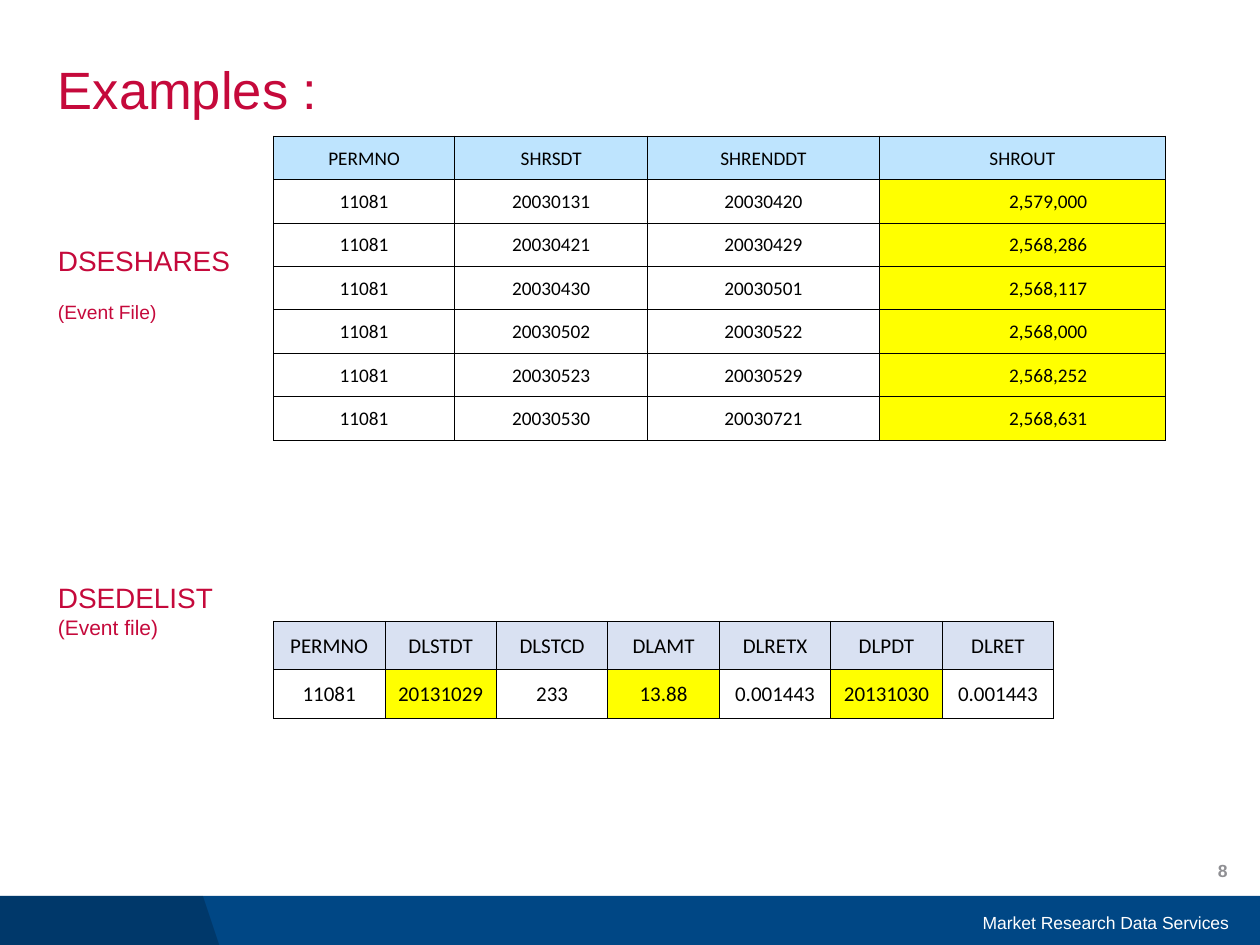
from lxml import etree
from pptx import Presentation
from pptx.dml.color import RGBColor
from pptx.enum.shapes import MSO_SHAPE
from pptx.enum.text import MSO_ANCHOR, PP_ALIGN
from pptx.oxml.ns import qn
from pptx.util import Inches, Pt

RECT = MSO_SHAPE.RECTANGLE
MID = MSO_ANCHOR.MIDDLE
LEFT, MIDDLE, RIGHT = PP_ALIGN.LEFT, PP_ALIGN.CENTER, PP_ALIGN.RIGHT
COLS, ROWS = 100, 75
WIDE, HIGH = Inches(10), Inches(7.5)
RED, BLUE, BLACK, WHITE = "C5093B", "004785", "000000", "FFFFFF"
GREY, SKY, PALE, GOLD = "8F8F93", "BEE4FE", "D9E1F2", "FFFF00"

HEADS = [
    ("Examples :", 30, 0),
    ("DSESHARES", 16, 71),
    ("(Event File)", 11, 13),
    ("DSEDELIST", 16, 147),
    ("(Event file)", 12, 0),
]
SHARES = [
    ("PERMNO", "SHRSDT", "SHRENDDT", "SHROUT"),
    ("11081", "20030131", "20030420", "2,579,000"),
    ("11081", "20030421", "20030429", "2,568,286"),
    ("11081", "20030430", "20030501", "2,568,117"),
    ("11081", "20030502", "20030522", "2,568,000"),
    ("11081", "20030523", "20030529", "2,568,252"),
    ("11081", "20030530", "20030721", "2,568,631"),
]
DELIST = [
    ("PERMNO", "DLSTDT", "DLSTCD", "DLAMT", "DLRETX", "DLPDT", "DLRET"),
    ("11081", "20131029", "233", "13.88", "0.001443", "20131030", "0.001443"),
]


def across(cols):
    return round(WIDE * cols / COLS)


def down(rows):
    return round(HIGH * rows / ROWS)


def place(left, top, width, height):
    return across(left), down(top), across(width), down(height)


def paint(fill, tone):
    fill.solid()
    fill.fore_color.rgb = RGBColor.from_string(tone)


def style(para, size, tone, face="Arial", bold=False, align=LEFT):
    para.alignment = align
    for run in para.runs:
        run.font.size = Pt(size)
        run.font.name = face
        run.font.bold = bold
        run.font.color.rgb = RGBColor.from_string(tone)


def plain(shape, tone):
    shape.shadow.inherit = False
    paint(shape.fill, tone)
    shape.line.fill.background()


def add_foot(slide):
    top = 71.1
    bar = slide.shapes.add_shape(RECT, *place(0, top, COLS, ROWS - top))
    plain(bar, BLUE)
    pen = slide.shapes.build_freeform(0, down(top))
    pen.add_line_segments([
        (across(16.1), down(top)),
        (across(17.4), HIGH),
        (0, HIGH),
    ])
    wedge = pen.convert_to_shape()
    plain(wedge, BLACK)
    tint = wedge.fill._xPr.find(".//" + qn("a:srgbClr"))
    etree.SubElement(tint, qn("a:alpha"), val="20000")


def add_heads(slide):
    frame = slide.shapes.add_textbox(*place(4.6, 4, 23.7, 48.1)).text_frame
    frame.word_wrap = True
    frame.margin_left = frame.margin_right = 0
    frame.text = "\n".join(text for text, size, gap in HEADS)
    for para, (text, size, gap) in zip(frame.paragraphs, HEADS):
        style(para, size, RED)
        para.space_before = Pt(gap)


def add_note(slide, spot, text, tone, bold=False):
    frame = slide.shapes.add_textbox(*place(*spot)).text_frame
    frame.word_wrap = True
    frame.vertical_anchor = MID
    frame.text = text
    style(frame.paragraphs[0], 10, tone, bold=bold, align=RIGHT)


def edge(cell):
    props = cell._tc.get_or_add_tcPr()
    for at, side in enumerate(("lnL", "lnR", "lnT", "lnB")):
        line = etree.Element(qn("a:" + side), w=str(Pt(0.5)))
        fill = etree.SubElement(line, qn("a:solidFill"))
        etree.SubElement(fill, qn("a:srgbClr"), val=BLACK)
        props.insert(at, line)


def fill_cell(cell, text, size, tone, inset):
    cell.text = text
    cell.vertical_anchor = MID
    cell.margin_left = cell.margin_top = across(0.1)
    cell.margin_right = across(inset or 0.1)
    cell.margin_bottom = 0
    style(cell.text_frame.paragraphs[0], size, BLACK, "Calibri",
          align=RIGHT if inset else MIDDLE)
    paint(cell.fill, tone)
    edge(cell)


def add_grid(slide, top, data, widths, height, size, head, marked, insets):
    spot = place(21.7, top, sum(widths), height * len(data))
    grid = slide.shapes.add_table(len(data), len(widths), *spot).table
    for col, width in zip(grid.columns, widths):
        col.width = across(width)
    for r, row in enumerate(data):
        grid.rows[r].height = down(height)
        for c, text in enumerate(row):
            tone = head if r == 0 else GOLD if c in marked else WHITE
            inset = insets.get(c) if r else None
            fill_cell(grid.cell(r, c), text, size, tone, inset)


def main():
    deck = Presentation()
    deck.slide_width, deck.slide_height = WIDE, HIGH
    slide = deck.slides.add_slide(deck.slide_layouts[6])
    add_foot(slide)
    add_heads(slide)
    add_note(slide, (64.7, 71.2, 33.8, 4),
             "Market Research Data Services", WHITE)
    add_note(slide, (75.9, 67.1, 22.5, 4), "8", GREY, True)
    add_grid(slide, 10.8, SHARES, (14.4, 15.3, 18.4, 22.7), 3.45, 11,
             SKY, {3}, {3: 6.2})
    add_grid(slide, 49.3, DELIST, [8.85] * 7, 3.85, 12,
             PALE, {1, 3, 5}, {})
    deck.save("out.pptx")


if __name__ == "__main__":
    main()
